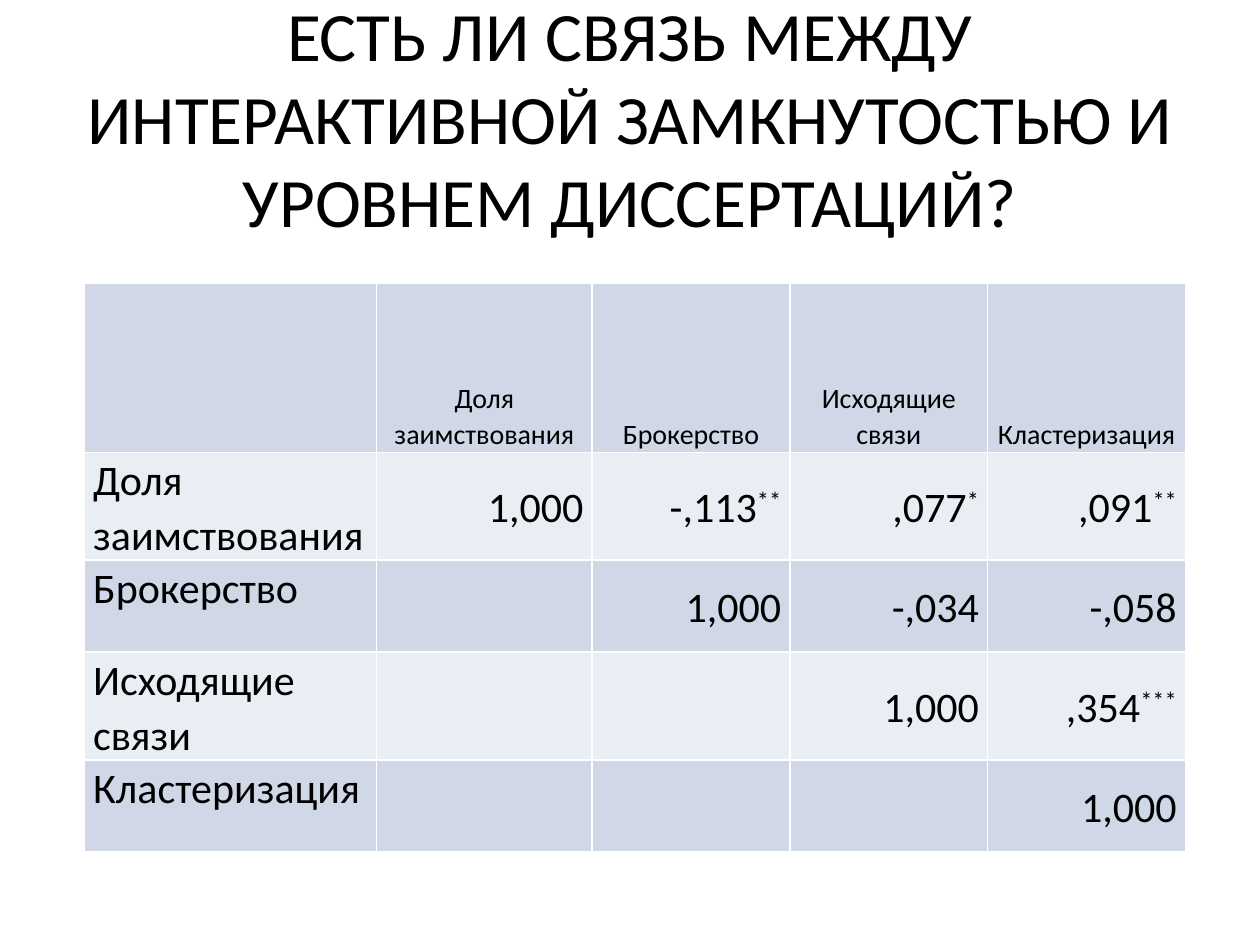
from dataclasses import dataclass

from lxml import etree
from pptx import Presentation
from pptx.dml.color import RGBColor
from pptx.enum.text import MSO_ANCHOR, PP_ALIGN
from pptx.oxml.ns import qn
from pptx.util import Inches, Pt

TOP, MIDDLE, BOTTOM = MSO_ANCHOR.TOP, MSO_ANCHOR.MIDDLE, MSO_ANCHOR.BOTTOM
LEFT, CENTER, RIGHT = PP_ALIGN.LEFT, PP_ALIGN.CENTER, PP_ALIGN.RIGHT
BLACK = RGBColor(0x00, 0x00, 0x00)
WHITE = RGBColor(0xFF, 0xFF, 0xFF)
DARK = RGBColor(0xD0, 0xD8, 0xE8)
LIGHT = RGBColor(0xE9, 0xED, 0xF4)
FONT = "Calibri"
WIDTH, HEIGHT = Inches(10), Inches(7.5)

TITLE = "ЕСТЬ ЛИ СВЯЗЬ МЕЖДУ ИНТЕРАКТИВНОЙ ЗАМКНУТОСТЬЮ И УРОВНЕМ ДИССЕРТАЦИЙ?"
NAMES = ["Доля заимствования", "Брокерство", "Исходящие связи", "Кластеризация"]
VALUES = [
    ["1,000", "-,113**", ",077*", ",091**"],
    ["", "1,000", "-,034", "-,058"],
    ["", "", "1,000", ",354***"],
    ["", "", "", "1,000"],
]
COLS = [2.32, 1.71, 1.57, 1.57, 1.57]
ROWS = [1.34] + [0.73] * len(NAMES)


@dataclass(frozen=True)
class Style:
    size: float
    align: PP_ALIGN
    anchor: MSO_ANCHOR


HEAD = Style(16, CENTER, BOTTOM)
LABEL = Style(24, LEFT, TOP)
NUMBER = Style(24, RIGHT, MIDDLE)
HEADING = Style(39.6, CENTER, MIDDLE)


def add_run(para, text: str, size: float, raised: bool = False) -> None:
    run = para.add_run()
    run.text = text
    run.font.size = Pt(size)
    run.font.name = FONT
    run.font.color.rgb = BLACK
    if raised:
        run.font._element.set("baseline", "30000")


def add_border(cell) -> None:
    props = cell._tc.get_or_add_tcPr()
    for index, side in enumerate(("a:lnL", "a:lnR", "a:lnT", "a:lnB")):
        line = etree.Element(qn(side), w=str(Pt(1)))
        fill = etree.SubElement(line, qn("a:solidFill"))
        etree.SubElement(fill, qn("a:srgbClr"), val=str(WHITE))
        props.insert(index, line)


def fill_cell(cell, text: str, style: Style, color: RGBColor) -> None:
    """Write the text, with trailing stars raised as significance marks."""
    cell.fill.solid()
    cell.fill.fore_color.rgb = color
    add_border(cell)
    if not text:
        return
    cell.margin_left = cell.margin_right = Inches(0.07)
    cell.margin_top = cell.margin_bottom = 0
    cell.vertical_anchor = style.anchor
    para = cell.text_frame.paragraphs[0]
    para.alignment = style.align
    para.line_spacing = 1.07
    base = text.rstrip("*")
    add_run(para, base, style.size)
    if base != text:
        add_run(para, text[len(base):], style.size, raised=True)


def add_title(slide) -> None:
    box = slide.shapes.add_textbox(
        int(WIDTH * 0.05), int(HEIGHT * 0.04), int(WIDTH * 0.9), Inches(1.25))
    frame = box.text_frame
    frame.word_wrap = True
    frame.vertical_anchor = HEADING.anchor
    para = frame.paragraphs[0]
    para.alignment = HEADING.align
    add_run(para, TITLE, HEADING.size)


def add_matrix(slide) -> None:
    table = slide.shapes.add_table(
        len(ROWS), len(COLS), Inches(0.67), int(HEIGHT * 0.3),
        Inches(sum(COLS)), Inches(sum(ROWS))).table
    table.first_row = table.horz_banding = False
    for col, width in zip(table.columns, COLS):
        col.width = Inches(width)
    for row, height in zip(table.rows, ROWS):
        row.height = Inches(height)
    grid = [["", *NAMES]] + [[name, *nums] for name, nums in zip(NAMES, VALUES)]
    for r, texts in enumerate(grid):
        for c, text in enumerate(texts):
            style = HEAD if r == 0 else LABEL if c == 0 else NUMBER
            fill_cell(table.cell(r, c), text, style, LIGHT if r % 2 else DARK)


def main() -> None:
    deck = Presentation()
    deck.slide_width, deck.slide_height = WIDTH, HEIGHT
    slide = deck.slides.add_slide(deck.slide_layouts[6])
    add_title(slide)
    add_matrix(slide)
    deck.save("out.pptx")


if __name__ == "__main__":
    main()
